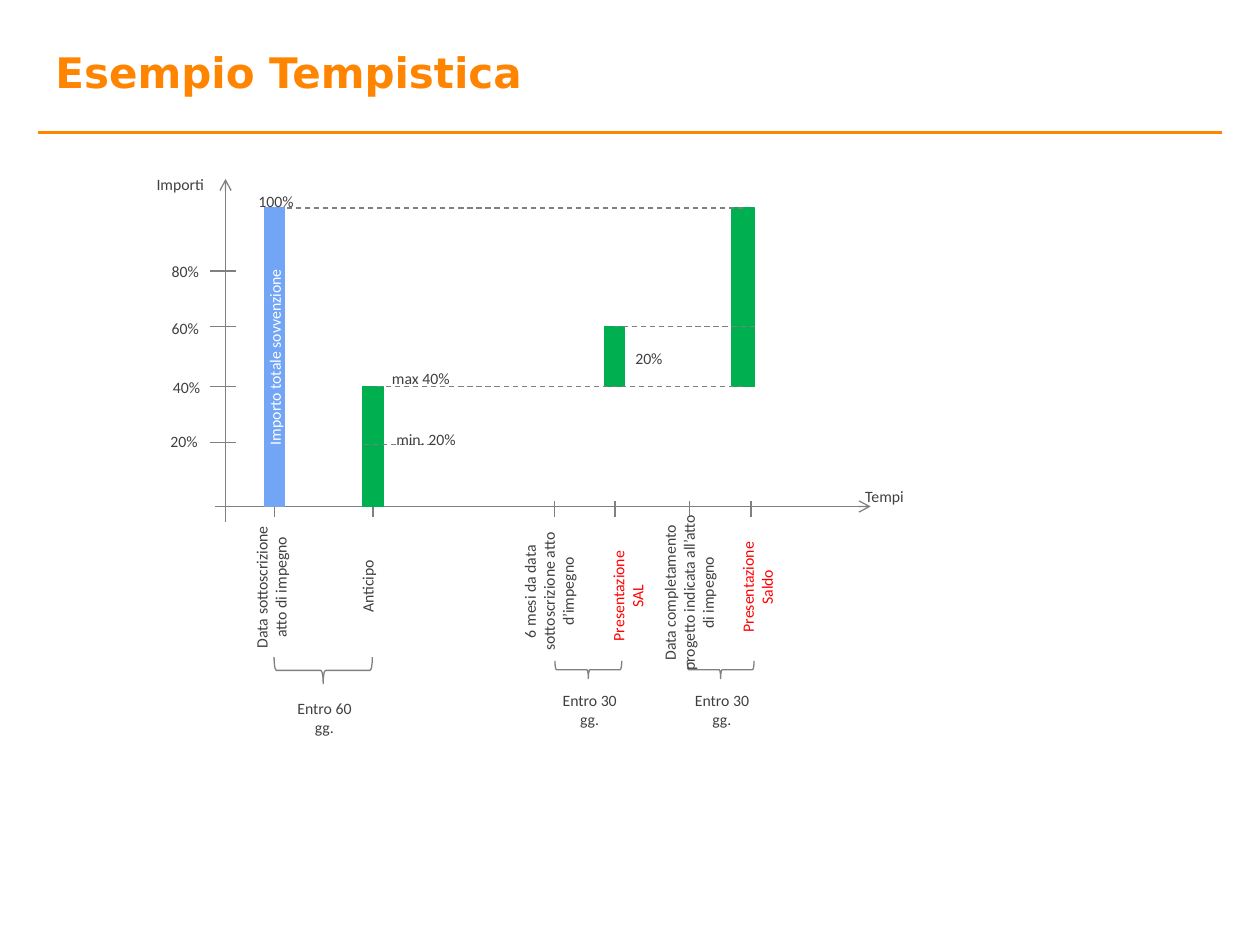
from dataclasses import dataclass

import pptx
import pptx.dml.color
import pptx.enum.dml
import pptx.enum.shapes
import pptx.enum.text
import pptx.oxml
import pptx.oxml.ns
import pptx.util

COLS, ROWS = 1000, 750  # layout grid; all positions below are columns and rows
COLORS = {
    "orange": "FF8500", "text": "404040", "axis": "808080", "green": "00B050",
    "blue": "72A5F5", "red": "FF0000", "white": "FFFFFF",
}
LEVELS = {0: 402, 20: 351, 40: 307, 60: 259, 80: 215, 100: 165}  # percent: row
AXIS_X = 179
START, ADVANCE, SIX_MONTHS, SAL, COMPLETION, BALANCE = 218, 296, 440, 488, 547, 596
SHAPES = pptx.enum.shapes.MSO_SHAPE

prs = pptx.Presentation()
prs.slide_width, prs.slide_height = pptx.util.Inches(10), pptx.util.Inches(7.5)
s = prs.slides.add_slide(prs.slide_layouts[6])


@dataclass
class Label:
    lines: list[str]
    x: float
    y: float
    w: float
    h: float
    color: str = "text"
    vertical: bool = False
    wrap: bool = False
    insets: tuple[float, ...] = (10, 5, 10, 5)  # left, top, right, bottom


@dataclass
class Bar:
    x: float
    w: float
    low: int
    high: int
    color: str = "green"


@dataclass
class Dash:
    left: float
    right: float
    y: float


@dataclass
class Deadline:
    left: float
    right: float
    top: float
    depth: float
    text: str
    text_y: float


def col(n: float) -> int:
    return round(prs.slide_width * n / COLS)


def row(n: float) -> int:
    return round(prs.slide_height * n / ROWS)


def rgb(name: str) -> pptx.dml.color.RGBColor:
    return pptx.dml.color.RGBColor.from_string(COLORS[name])


def write(sp, lines: list[str], color: str, insets: tuple[float, ...],
          size: float = 9, font: str = "Calibri", bold: bool = False,
          align=pptx.enum.text.PP_ALIGN.CENTER, vertical: bool = False):
    tf = sp.text_frame
    tf.margin_left, tf.margin_right = col(insets[0]), col(insets[2])
    tf.margin_top, tf.margin_bottom = row(insets[1]), row(insets[3])
    if vertical:
        tf._txBody.bodyPr.set("vert", "vert270")
    tf.text = "\n".join(lines)
    for p in tf.paragraphs:
        p.alignment = align
        for r in p.runs:
            r.font.size, r.font.name, r.font.bold = pptx.util.Pt(size), font, bold
            r.font.color.rgb = rgb(color)
    return tf


def add_label(label: Label) -> None:
    sp = s.shapes.add_textbox(col(label.x), row(label.y), col(label.w), row(label.h))
    tf = write(sp, label.lines, label.color, label.insets, vertical=label.vertical)
    tf.word_wrap = label.wrap
    tf.auto_size = pptx.enum.text.MSO_AUTO_SIZE.SHAPE_TO_FIT_TEXT


def add_line(x1: float, y1: float, x2: float, y2: float, color: str = "axis",
             width: float = 0.75, dashed: bool = False, arrow: bool = False) -> None:
    line = s.shapes.add_connector(
        pptx.enum.shapes.MSO_CONNECTOR.STRAIGHT, col(x1), row(y1), col(x2), row(y2))
    line.line.color.rgb = rgb(color)
    line.line.width = pptx.util.Pt(width)
    if dashed:
        line.line.dash_style = pptx.enum.dml.MSO_LINE.DASH
    if arrow:
        end = pptx.oxml.parse_xml(
            f'<a:tailEnd {pptx.oxml.ns.nsdecls("a")} type="arrow"/>')
        line.line._get_or_add_ln().append(end)
    effects = pptx.oxml.parse_xml(f'<a:effectLst {pptx.oxml.ns.nsdecls("a")}/>')
    line._element.spPr.append(effects)


def add_bar(bar: Bar):
    top, bottom = LEVELS[bar.high], LEVELS[bar.low]
    sp = s.shapes.add_shape(
        SHAPES.RECTANGLE, col(bar.x), row(top), col(bar.w), row(bottom - top))
    sp.shadow.inherit = False
    sp.fill.solid()
    sp.fill.fore_color.rgb = sp.line.color.rgb = rgb(bar.color)
    sp.line.width = pptx.util.Pt(0.75)
    return sp


def add_deadline(d: Deadline) -> None:
    """Draw a brace that points down, with its term below."""
    span, mid_x, mid_y = d.right - d.left, (d.left + d.right) / 2, d.top + d.depth / 2
    sp = s.shapes.add_shape(SHAPES.LEFT_BRACE, col(mid_x - d.depth / 2),
                            row(mid_y - span / 2), col(d.depth), row(span))
    sp.rotation = 270
    sp.shadow.inherit = False
    sp.fill.background()
    sp.line.color.rgb = rgb("axis")
    sp.line.width = pptx.util.Pt(0.75)
    add_label(Label([d.text], mid_x - 39, d.text_y, 80, 35, wrap=True))


BARS = [Bar(288, 16, 0, 40), Bar(480, 16, 40, 60), Bar(581, 18, 40, 100)]
DASHES = [
    Dash(START, 590, LEVELS[100]), Dash(SAL, 599, LEVELS[60]),
    Dash(ADVANCE, 590, LEVELS[40]), Dash(288, 343, 353),
]
DEADLINES = [
    Deadline(217.5, 295.5, 521.5, 21, "Entro 60 gg.", 549.5),
    Deadline(440.5, 493.5, 524.5, 14, "Entro 30 gg.", 543.5),
    Deadline(545.5, 598.5, 524.5, 14, "Entro 30 gg.", 543.5),
]
LABELS = [
    Label(["Importi"], 114, 134, 58, 25),
    Label(["Tempi"], 676, 381, 52, 25),
    Label(["100%"], 195, 147, 48, 25),
    Label(["80%"], 126, 203, 42, 25),
    Label(["60%"], 126, 248, 42, 25),
    Label(["40%"], 127, 295, 42, 25),
    Label(["20%"], 125, 338, 42, 25),
    Label(["max 40%"], 301, 288, 66, 25),
    Label(["min. 20%"], 304, 336, 68, 25),
    Label(["20%"], 494, 272, 42, 25),
    Label(["Data sottoscrizione", "atto di impegno"], 195, 409, 50, 114, vertical=True),
    Label(["Anticipo"], 279, 439, 35, 53, vertical=True),
    Label(["6 mesi da data", "sottoscrizione atto", "d’impegno"],
          408, 414, 66, 111, vertical=True),
    Label(["Presentazione", "SAL"], 471, 434, 52, 78, "red", True, True, (12, 0, 10, 0)),
    Label(["Data completamento", "progetto indicata all’atto di impegno"],
          520, 404, 53, 133, vertical=True, wrap=True, insets=(4, 4, 4, 4)),
    Label(["Presentazione Saldo"], 581, 415, 50, 102, "red", True, True),
]

add_line(30, 105, 970, 105, "orange", 2)
title = s.shapes.add_textbox(col(44), row(37), col(763), row(52))
write(title, ["Esempio Tempistica"], "orange", (0, 0, 0, 0), 24, "DejaVu Sans", True,
      pptx.enum.text.PP_ALIGN.LEFT).word_wrap = True

add_line(171, LEVELS[0], 691, LEVELS[0], arrow=True)
add_line(AXIS_X, 414, AXIS_X, 142, arrow=True)
for x in (START, ADVANCE, SIX_MONTHS, SAL, COMPLETION, BALANCE):
    add_line(x, 398, x, 410)
for percent in (20, 40, 60, 80):
    add_line(187, LEVELS[percent], 167, LEVELS[percent])

for bar in BARS:
    add_bar(bar)
for dash in DASHES:
    add_line(dash.right, dash.y, dash.left, dash.y, dashed=True)
total = add_bar(Bar(210, 16, 0, 100, "blue"))
write(total, ["Importo totale sovvenzione"], "white", (4, 4, 4, 4), vertical=True)
for deadline in DEADLINES:
    add_deadline(deadline)
for label in LABELS:
    add_label(label)

prs.save("out.pptx")
